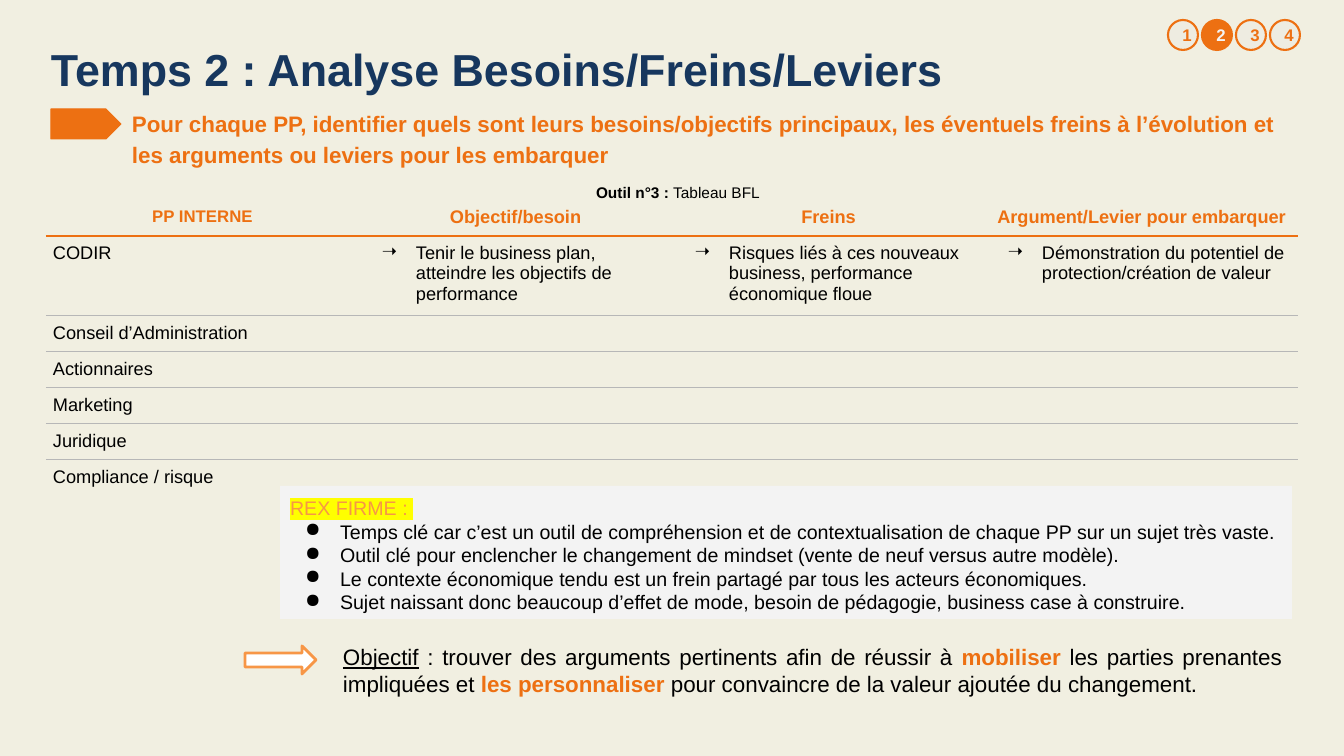
from pptx import Presentation
from pptx.dml.color import RGBColor
from pptx.enum.shapes import MSO_SHAPE
from pptx.enum.text import MSO_ANCHOR, PP_ALIGN
from pptx.oxml.xmlchemy import OxmlElement
from pptx.util import Emu, Pt

PX = 914400 / 100.8
CREAM = RGBColor(0xF1, 0xEF, 0xE1)
SAND = RGBColor(0xEE, 0xEC, 0xE1)
NAVY = RGBColor(0x17, 0x37, 0x5E)
ORANGE = RGBColor(0xED, 0x70, 0x12)
LIGHT_ORANGE = RGBColor(0xF7, 0x96, 0x46)
PALE = RGBColor(0xF4, 0xF4, 0xF4)
PANEL = RGBColor(0xF3, 0xF3, 0xF3)
RULE = RGBColor(0xB7, 0xB7, 0xB7)
YELLOW = RGBColor(0xFF, 0xFF, 0x00)
WHITE = RGBColor(0xFF, 0xFF, 0xFF)
BLACK = RGBColor(0x00, 0x00, 0x00)

HEADERS = ["PP INTERNE", "Objectif/besoin", "Freins", "Argument/Levier pour embarquer"]
STAKEHOLDERS = [
    ["CODIR", "Tenir le business plan, atteindre les objectifs de performance",
     "Risques liés à ces nouveaux business, performance économique floue",
     "Démonstration du potentiel de protection/création de valeur"],
    ["Conseil d’Administration"], ["Actionnaires"], ["Marketing"],
    ["Juridique"], ["Compliance / risque"],
]
FEEDBACK = [
    "Temps clé car c’est un outil de compréhension et de contextualisation de chaque PP sur un sujet très vaste.",
    "Outil clé pour enclencher le changement de mindset (vente de neuf versus autre modèle).",
    "Le contexte économique tendu est un frein partagé par tous les acteurs économiques.",
    "Sujet naissant donc beaucoup d’effet de mode, besoin de pédagogie, business case à construire.",
]


def px(length):
    """Turn a length in px into EMU."""
    return Emu(round(length * PX))


def add_child(parent, tag, **attributes):
    """Append an XML element with the given attributes."""
    child = OxmlElement(tag)
    for name, value in attributes.items():
        child.set(name, str(value))
    parent.append(child)
    return child


def add_runs(paragraph, size, *runs):
    """Write (text, colour, bold) runs into a paragraph."""
    for text, color, bold in runs:
        run = paragraph.add_run()
        run.text = text
        run.font.name = "Arial"
        run.font.size = Pt(size)
        run.font.bold = bold
        run.font.color.rgb = color


def add_bullet(paragraph, character, indent, hanging):
    """Give a paragraph a hanging bullet."""
    properties = paragraph._p.get_or_add_pPr()
    properties.set("marL", str(px(indent)))
    properties.set("indent", str(-px(hanging)))
    add_child(properties, "a:buChar", char=character)


def set_margins(text_frame, horizontal, vertical):
    """Set the insets and turn wrapping on."""
    text_frame.word_wrap = True
    text_frame.margin_left = text_frame.margin_right = px(horizontal)
    text_frame.margin_top = text_frame.margin_bottom = px(vertical)


def add_text(slide, left, top, width, height, horizontal=10, vertical=10):
    """Add a text box and return its first paragraph."""
    box = slide.shapes.add_textbox(px(left), px(top), px(width), px(height))
    set_margins(box.text_frame, horizontal, vertical)
    return box.text_frame.paragraphs[0]


def add_box(slide, kind, left, top, width, height, fill, line=None, weight=1):
    """Add a flat preset shape."""
    shape = slide.shapes.add_shape(kind, px(left), px(top), px(width), px(height))
    shape.shadow.inherit = False
    shape.fill.solid()
    shape.fill.fore_color.rgb = fill
    if line is None:
        shape.line.fill.background()
    else:
        shape.line.color.rgb = line
        shape.line.width = Pt(weight)
    return shape


def add_steps(slide, left, top, size, pitch, count, current):
    """Draw the numbered step circles."""
    for step in range(1, count + 1):
        active = step == current
        circle = add_box(slide, MSO_SHAPE.OVAL, left + (step - 1) * pitch, top, size, size,
                         ORANGE if active else SAND, ORANGE, 1.5)
        set_margins(circle.text_frame, 10, 10)
        circle.text_frame.vertical_anchor = MSO_ANCHOR.MIDDLE
        paragraph = circle.text_frame.paragraphs[0]
        paragraph.alignment = PP_ALIGN.CENTER
        add_runs(paragraph, 12, (str(step), PALE if active else ORANGE, True))


def add_heading(slide, left, top, width):
    """Place the title, the instruction with its marker and the table caption."""
    add_runs(add_text(slide, left, top, width, 54, 0, 0), 32,
             ("Temps 2 : Analyse Besoins/Freins/Leviers", NAVY, True))
    add_box(slide, MSO_SHAPE.PENTAGON, left, top + 67, 70, 30, ORANGE, ORANGE, 0.75)
    instruction = add_text(slide, left + 71, top + 54, width - 31, 79)
    instruction.line_spacing = 1.15
    add_runs(instruction, 16, (
        "Pour chaque PP, identifier quels sont leurs besoins/objectifs principaux, les éventuels "
        "freins à l’évolution et les arguments ou leviers pour les embarquer", ORANGE, True))
    caption = add_text(slide, left + 4, top + 128, width + 36, 41)
    caption.alignment = PP_ALIGN.CENTER
    caption.line_spacing = 1.15
    add_runs(caption, 11, ("Outil n°3 :", BLACK, True), (" Tableau BFL", BLACK, False))


def add_border(cell, tag, color=None, weight=1):
    """Set one cell border, or hide it when no colour is given."""
    line = add_child(cell._tc.get_or_add_tcPr(), tag, w=Pt(weight))
    if color is None:
        add_child(line, "a:noFill")
    else:
        add_child(add_child(line, "a:solidFill"), "a:srgbClr", val=color)


def add_stakeholder_table(slide, left, top, width):
    """Build the table of needs, obstacles and levers."""
    rows = [HEADERS] + STAKEHOLDERS
    heights = [38, 79] + [36] * (len(rows) - 2)
    frame = slide.shapes.add_table(len(rows), len(HEADERS), px(left), px(top),
                                   px(width), px(sum(heights)))
    table = frame.table
    table.first_row = table.horz_banding = False
    for column in table.columns:
        column.width = px(width / len(HEADERS))
    rules = [(None, 1), (ORANGE, 1.5)] + [(RULE, 1)] * (len(rows) - 2) + [(None, 1)]
    for row_index, texts in enumerate(rows):
        table.rows[row_index].height = px(heights[row_index])
        for column_index in range(len(HEADERS)):
            cell = table.cell(row_index, column_index)
            cell.margin_left = cell.margin_right = px(7)
            cell.margin_top = cell.margin_bottom = px(7)
            add_border(cell, "a:lnL")
            add_border(cell, "a:lnR")
            add_border(cell, "a:lnT", *rules[row_index])
            add_border(cell, "a:lnB", *rules[row_index + 1])
            cell.fill.background()
            paragraph = cell.text_frame.paragraphs[0]
            if column_index >= len(texts):
                add_child(paragraph._p, "a:endParaRPr", sz=1300)
            elif row_index == 0:
                cell.vertical_anchor = MSO_ANCHOR.MIDDLE
                paragraph.alignment = PP_ALIGN.CENTER
                add_runs(paragraph, 13 if column_index else 12, (texts[column_index], ORANGE, True))
            else:
                if column_index:
                    add_bullet(paragraph, "➝", 50, 34)
                add_runs(paragraph, 13, (texts[column_index], BLACK, False))


def add_feedback(slide, left, top, width, height):
    """Build the feedback panel with its highlighted label."""
    panel = add_box(slide, MSO_SHAPE.RECTANGLE, left, top, width, height, PANEL)
    text_frame = panel.text_frame
    set_margins(text_frame, 10, 10)
    text_frame.vertical_anchor = MSO_ANCHOR.TOP
    label = text_frame.paragraphs[0]
    label.alignment = PP_ALIGN.LEFT
    add_runs(label, 14, ("REX FIRME : ", LIGHT_ORANGE, False))
    highlight = OxmlElement("a:highlight")
    add_child(highlight, "a:srgbClr", val=YELLOW)
    label.runs[0].font._element.find("{*}solidFill").addnext(highlight)
    for text in FEEDBACK:
        paragraph = text_frame.add_paragraph()
        paragraph.alignment = PP_ALIGN.JUSTIFY
        add_bullet(paragraph, "●", 50, 35)
        add_runs(paragraph, 14, (text, BLACK, False))


def add_objective(slide, left, top, width):
    """Place the arrow and the closing objective."""
    add_box(slide, MSO_SHAPE.RIGHT_ARROW, left, top + 8, 71, 28, WHITE, LIGHT_ORANGE, 2)
    paragraph = add_text(slide, left + 88, top, width - 88, 73, 10, 5)
    paragraph.alignment = PP_ALIGN.JUSTIFY
    add_runs(paragraph, 16,
             ("Objectif", BLACK, False),
             (" : trouver des arguments pertinents afin de réussir à ", BLACK, False),
             ("mobiliser", ORANGE, True),
             (" les parties prenantes impliquées et ", BLACK, False),
             ("les personnaliser ", ORANGE, True),
             ("pour convaincre de la valeur ajoutée du changement.", BLACK, False))
    paragraph.runs[0].font.underline = True


def main():
    """Build and save the slide."""
    presentation = Presentation()
    presentation.slide_width, presentation.slide_height = px(1344), px(756)
    slide = presentation.slides.add_slide(presentation.slide_layouts[6])
    slide.background.fill.solid()
    slide.background.fill.fore_color.rgb = CREAM
    add_heading(slide, 51, 42, 1210)
    add_steps(slide, 1168, 20, 30, 34, 4, 2)
    add_stakeholder_table(slide, 46, 198, 1252)
    add_feedback(slide, 280, 486, 1012, 133)
    add_objective(slide, 245, 638, 1047)
    presentation.save("out.pptx")


if __name__ == "__main__":
    main()
